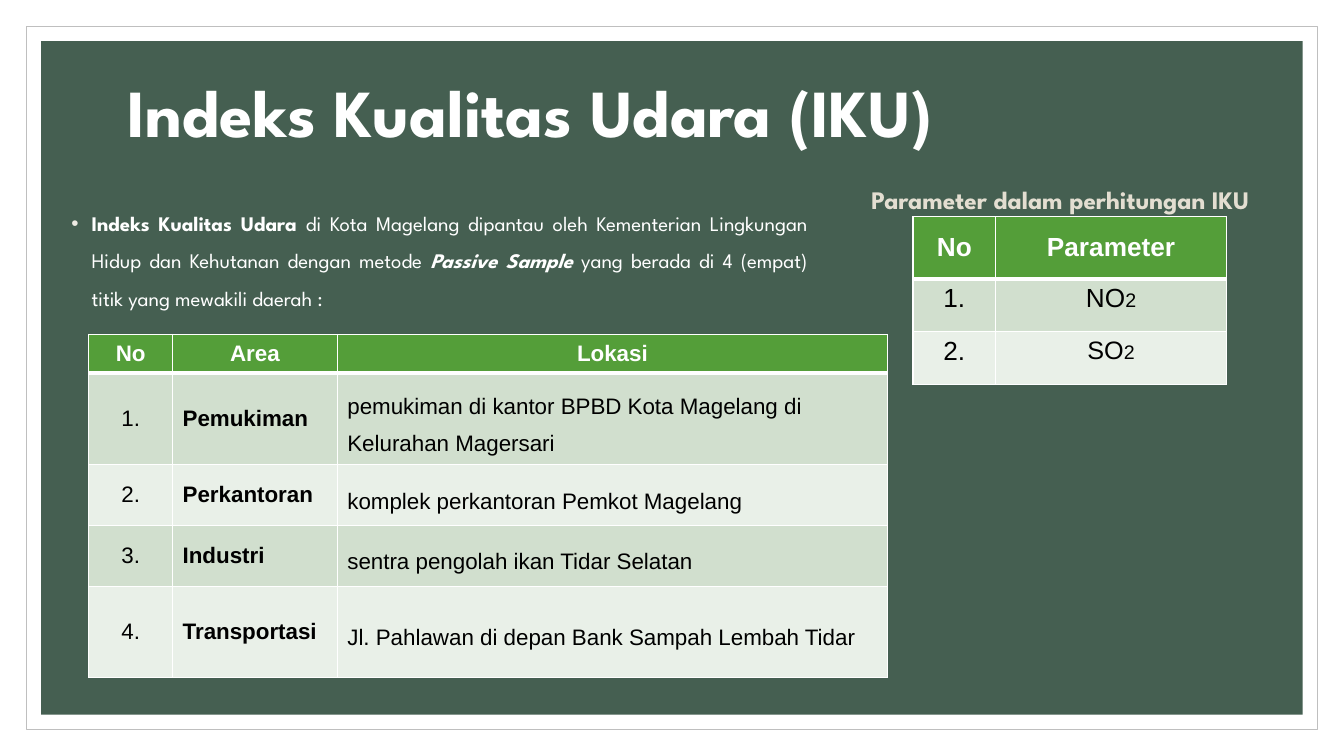
from pptx import Presentation
from pptx.dml.color import RGBColor
from pptx.enum.shapes import MSO_SHAPE
from pptx.enum.text import MSO_ANCHOR, PP_ALIGN
from pptx.oxml.ns import qn
from pptx.util import Cm, Pt
from lxml.etree import SubElement

WHITE = RGBColor(0xFF, 0xFF, 0xFF)
BLACK = RGBColor(0x00, 0x00, 0x00)
GREY = RGBColor(0xBF, 0xBF, 0xBF)
DARK_GREEN = RGBColor(0x45, 0x5F, 0x51)
GREEN = RGBColor(0x54, 0x9E, 0x39)
BANDS = (RGBColor(0xD1, 0xDF, 0xCE), RGBColor(0xE9, 0xF0, 0xE8))
CREAM = RGBColor(0xE3, 0xDE, 0xD1)
BULLET = RGBColor(0xEE, 0xEB, 0xE3)
DISPLAY = "League Spartan"
BODY = "Arial"
WIDTH, HEIGHT = 33.87, 19.05


def add_run(p, text, size, color, font=DISPLAY, bold=False, italic=False):
    r = p.add_run()
    r.text = text
    r.font.name = font
    r.font.size = Pt(size)
    r.font.bold = bold
    r.font.italic = italic
    r.font.color.rgb = color


def add_text_box(slide, box, anchor):
    tf = slide.shapes.add_textbox(*map(Cm, box)).text_frame
    tf.word_wrap = True
    tf.vertical_anchor = anchor
    return tf.paragraphs[0]


def add_panel(slide, inset, fill, line=None):
    sp = slide.shapes.add_shape(
        MSO_SHAPE.RECTANGLE, Cm(inset), Cm(inset),
        Cm(WIDTH - 2 * inset), Cm(HEIGHT - 2 * inset))
    sp.shadow.inherit = False
    sp.fill.solid()
    sp.fill.fore_color.rgb = fill
    if line is None:
        sp.line.fill.background()
    else:
        sp.line.color.rgb = line
        sp.line.width = Pt(0.5)


def add_title(slide, box):
    p = add_text_box(slide, box, MSO_ANCHOR.MIDDLE)
    p.line_spacing = 0.9
    add_run(p, "Indeks Kualitas Udara (IKU)", 48, WHITE, bold=True)


def add_intro(slide, box):
    p = add_text_box(slide, box, MSO_ANCHOR.TOP)
    p.alignment = PP_ALIGN.JUSTIFY
    p.line_spacing = 1.5
    p.space_before = Pt(9)
    pPr = p._p.get_or_add_pPr()
    pPr.set("marL", str(Cm(0.51)))
    pPr.set("indent", str(-Cm(0.51)))
    SubElement(SubElement(pPr, qn("a:buClr")), qn("a:srgbClr"), val=str(BULLET))
    SubElement(pPr, qn("a:buFont"), typeface=BODY)
    SubElement(pPr, qn("a:buChar"), char="•")
    for text, bold, italic in (
        ("Indeks Kualitas Udara ", True, False),
        ("di Kota Magelang dipantau oleh Kementerian Lingkungan Hidup "
         "dan Kehutanan dengan metode ", False, False),
        ("Passive Sample ", True, True),
        ("yang berada di 4 (empat) titik yang mewakili daerah :", False, False),
    ):
        add_run(p, text, 14.8, WHITE, bold=bold, italic=italic)


def add_parameter_heading(slide, box):
    p = add_text_box(slide, box, MSO_ANCHOR.MIDDLE)
    p.alignment = PP_ALIGN.CENTER
    add_run(p, "Parameter dalam perhitungan IKU", 18, CREAM, bold=True)


def set_borders(cell, row):
    tcPr = cell._tc.get_or_add_tcPr()
    widths = {"lnL": 1, "lnR": 1, "lnT": 3 if row == 1 else 1, "lnB": 3 if row == 0 else 1}
    for tag, width in widths.items():
        ln = SubElement(tcPr, qn(f"a:{tag}"), w=str(Pt(width)))
        SubElement(SubElement(ln, qn("a:solidFill")), qn("a:srgbClr"), val=str(WHITE))


def add_grid(slide, left, top, cols, rows, headers, size):
    table = slide.shapes.add_table(
        len(rows), len(cols), Cm(left), Cm(top), Cm(sum(cols)), Cm(sum(rows))).table
    for column, width in zip(table.columns, cols):
        column.width = Cm(width)
    for i, height in enumerate(rows):
        table.rows[i].height = Cm(height)
        for cell in table.rows[i].cells:
            set_borders(cell, i)
            cell.fill.solid()
            cell.fill.fore_color.rgb = BANDS[(i - 1) % 2] if i else GREEN
    for j, header in enumerate(headers):
        p = fill_cell(table.cell(0, j), PP_ALIGN.CENTER)
        add_run(p, header, size, WHITE, BODY, bold=True)
    return table


def fill_cell(cell, align, anchor=MSO_ANCHOR.MIDDLE):
    cell.vertical_anchor = anchor
    p = cell.text_frame.paragraphs[0]
    p.alignment = align
    return p


def add_parameter_table(slide, left, top):
    table = add_grid(slide, left, top, (2.08, 5.82), (1.57, 1.33, 1.33),
                     ("No", "Parameter"), 18.7)
    for i, (formula, size) in enumerate((("NO", 18.7), ("SO", 18)), 1):
        number, parameter = (
            fill_cell(table.cell(i, j), PP_ALIGN.CENTER, MSO_ANCHOR.TOP) for j in range(2))
        add_run(number, f"{i}.", 18.7, BLACK, BODY)
        add_run(parameter, formula, size, BLACK, BODY)
        add_run(parameter, "2", 14, BLACK, BODY)


def add_location_table(slide, left, top):
    table = add_grid(slide, left, top, (2.11, 4.15, 13.87), (0.97, 2.31, 1.53, 1.53, 2.31),
                     ("No", "Area", "Lokasi"), 16)
    locations = (
        ("Pemukiman", "pemukiman di kantor BPBD Kota Magelang di Kelurahan Magersari"),
        ("Perkantoran", "komplek perkantoran Pemkot Magelang"),
        ("Industri", "sentra pengolah ikan Tidar Selatan"),
        ("Transportasi", "Jl. Pahlawan di depan Bank Sampah Lembah Tidar"),
    )
    for i, (area, location) in enumerate(locations, 1):
        add_run(fill_cell(table.cell(i, 0), PP_ALIGN.CENTER), f"{i}.", 16, BLACK, BODY)
        add_run(fill_cell(table.cell(i, 1), PP_ALIGN.LEFT), area, 16, BLACK, BODY, bold=True)
        p = fill_cell(table.cell(i, 2), PP_ALIGN.LEFT)
        p.line_spacing = 1.5
        add_run(p, location, 16, BLACK, BODY)


def main():
    prs = Presentation()
    prs.slide_width, prs.slide_height = Cm(WIDTH), Cm(HEIGHT)
    slide = prs.slides.add_slide(prs.slide_layouts[6])
    add_panel(slide, 0.66, WHITE, GREY)
    add_panel(slide, 1.04, DARK_GREEN)
    add_title(slide, (2.97, 1.45, 27.94, 2.95))
    add_intro(slide, (1.55, 4.88, 19.05, 3.15))
    add_parameter_heading(slide, (20.12, 4.45, 13.21, 1.14))
    add_parameter_table(slide, 23.01, 5.46)
    add_location_table(slide, 2.24, 8.43)
    prs.save("out.pptx")


if __name__ == "__main__":
    main()
